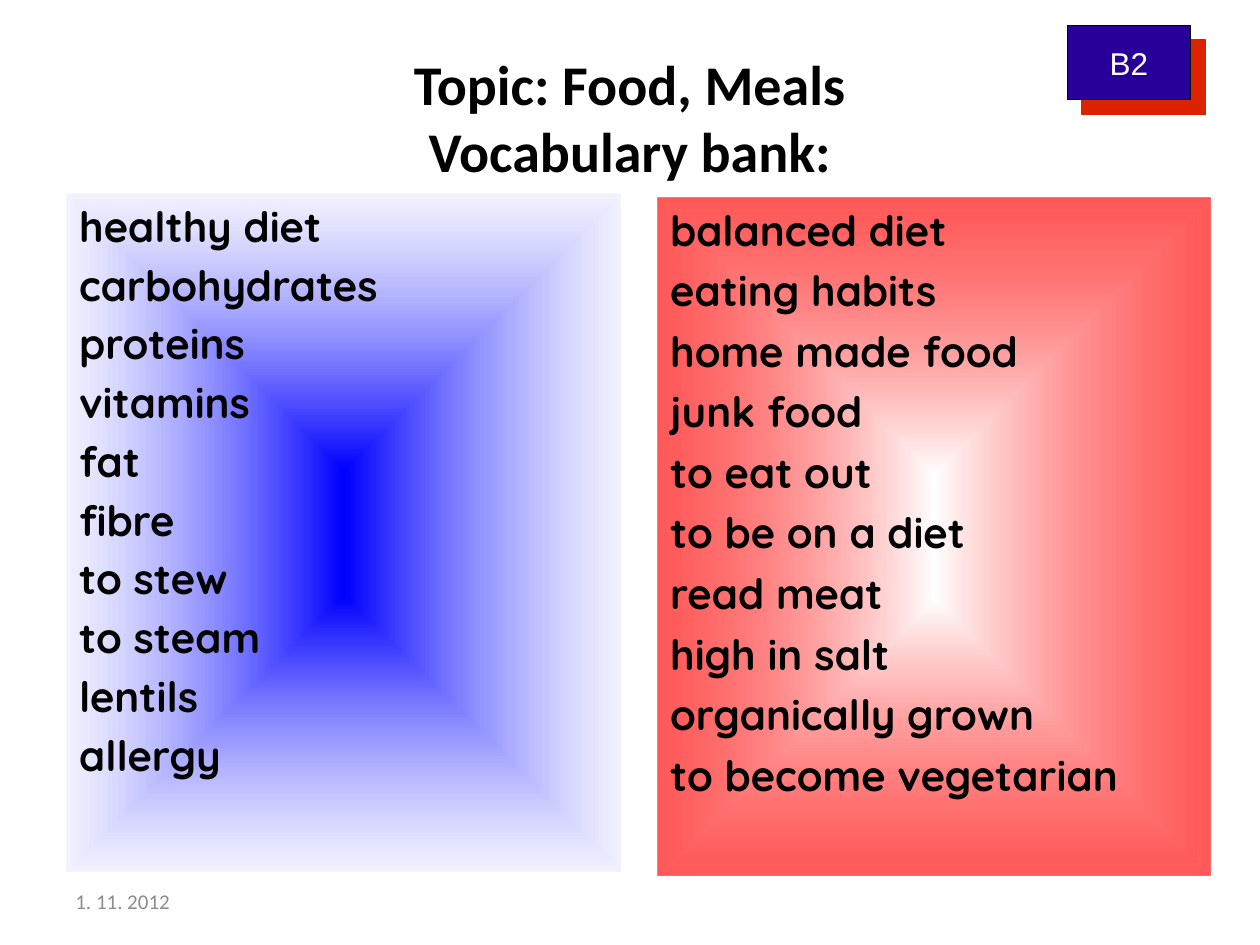
from lxml import etree
from pptx import Presentation
from pptx.dml.color import RGBColor
from pptx.enum.shapes import MSO_SHAPE as SHAPE
from pptx.enum.text import MSO_ANCHOR as ANCHOR, PP_ALIGN as ALIGN
from pptx.oxml import parse_xml
from pptx.oxml.ns import nsdecls, qn
from pptx.util import Inches, Pt

BLACK = RGBColor(0x00, 0x00, 0x00)
WHITE = RGBColor(0xFF, 0xFF, 0xFF)
GREY = RGBColor(0x8C, 0x8C, 0x8C)
BLUE = RGBColor(0x00, 0x00, 0xFF)
PALE_BLUE = RGBColor(0xE6, 0xE6, 0xFF)
RED = RGBColor(0xFF, 0x00, 0x00)
INDIGO = RGBColor(0x28, 0x00, 0x99)
SHADOW_RED = RGBColor(0xDC, 0x23, 0x00)

# Content
TITLE = "Topic: Food, Meals\vVocabulary bank:"
DATE = "1. 11. 2012"
LEVEL = "B2"
PANEL_SIZE = (4.39, 5.38)
PANELS = [
    dict(pos=(0.53, 1.54), center=BLUE, edge=PALE_BLUE, opacity=50, gap=4.8,
         words=["healthy diet", "carbohydrates", "proteins", "vitamins", "fat",
                "fibre", "to stew", "to steam", "lentils", "allergy"]),
    dict(pos=(5.22, 1.57), center=WHITE, edge=RED, opacity=65, gap=5.8,
         words=["balanced diet", "eating habits", "home made food",
                "junk food", "to eat out", "to be on a diet", "read meat",
                "high in salt", "organically grown",
                "to become vegetarian"]),
]


def write(sp, text, font, size, color, bold=False, align=ALIGN.LEFT,
          anchor=ANCHOR.MIDDLE, gap=0):
    tf = sp.text_frame
    tf.word_wrap = True
    tf.vertical_anchor = anchor
    tf.text = text
    for i, p in enumerate(tf.paragraphs):
        p.alignment = align
        if gap and i:
            p.space_before = Pt(gap)
        for r in p.runs:
            r.font.name, r.font.size, r.font.bold = font, Pt(size), bold
            r.font.color.rgb = color


def add_text(slide, box, text, *style, **options):
    sp = slide.shapes.add_textbox(*map(Inches, box))
    write(sp, text, *style, **options)


def add_rect(slide, box):
    sp = slide.shapes.add_shape(SHAPE.RECTANGLE, *map(Inches, box))
    sp.shadow.inherit = False
    return sp


def fill_from_center(sp, center, edge, opacity):
    sp.fill.gradient()
    old = sp._element.spPr.find(qn("a:gradFill"))
    new = parse_xml(
        f'<a:gradFill {nsdecls("a")} rotWithShape="1"><a:gsLst>'
        f'<a:gs pos="0"><a:srgbClr val="{center}"/></a:gs>'
        f'<a:gs pos="100000"><a:srgbClr val="{edge}">'
        f'<a:alpha val="{opacity * 1000}"/></a:srgbClr></a:gs></a:gsLst>'
        '<a:path path="shape"><a:fillToRect l="50000" t="50000" r="50000" '
        'b="50000"/></a:path></a:gradFill>')
    old.getparent().replace(old, new)


def add_shadow(sp, color, distance):
    effects = sp._element.spPr.find(qn("a:effectLst"))
    shadow = etree.SubElement(effects, qn("a:outerShdw"), blurRad="0",
                              dist=str(Pt(distance)), dir=str(45 * 60000),
                              algn="tl", rotWithShape="0")
    etree.SubElement(shadow, qn("a:srgbClr"), val=str(color))


prs = Presentation()
prs.slide_width, prs.slide_height = Inches(10), Inches(7.5)
slide = prs.slides.add_slide(prs.slide_layouts[6])

# Date and title
add_text(slide, (0.5, 6.95, 2.33, 0.4), DATE, "Calibri", 12, GREY)
add_text(slide, (0.5, 0.25, 9, 1.35), TITLE, "Calibri", 32, BLACK,
         bold=True, align=ALIGN.CENTER)

# Word panels
for panel in PANELS:
    sp = add_rect(slide, panel["pos"] + PANEL_SIZE)
    fill_from_center(sp, panel["center"], panel["edge"], panel["opacity"])
    sp.line.fill.background()
    write(sp, "\n".join(panel["words"]), "Quicksand", 24, BLACK, bold=True,
          anchor=ANCHOR.TOP, gap=panel["gap"])

# Level badge
badge = add_rect(slide, (8.47, 0.2, 0.98, 0.59))
badge.fill.solid()
badge.fill.fore_color.rgb = INDIGO
badge.line.color.rgb = BLACK
badge.line.width = Pt(0.75)
add_shadow(badge, SHADOW_RED, 12)
write(badge, LEVEL, "Arial", 18, WHITE, align=ALIGN.CENTER)

prs.save("out.pptx")
